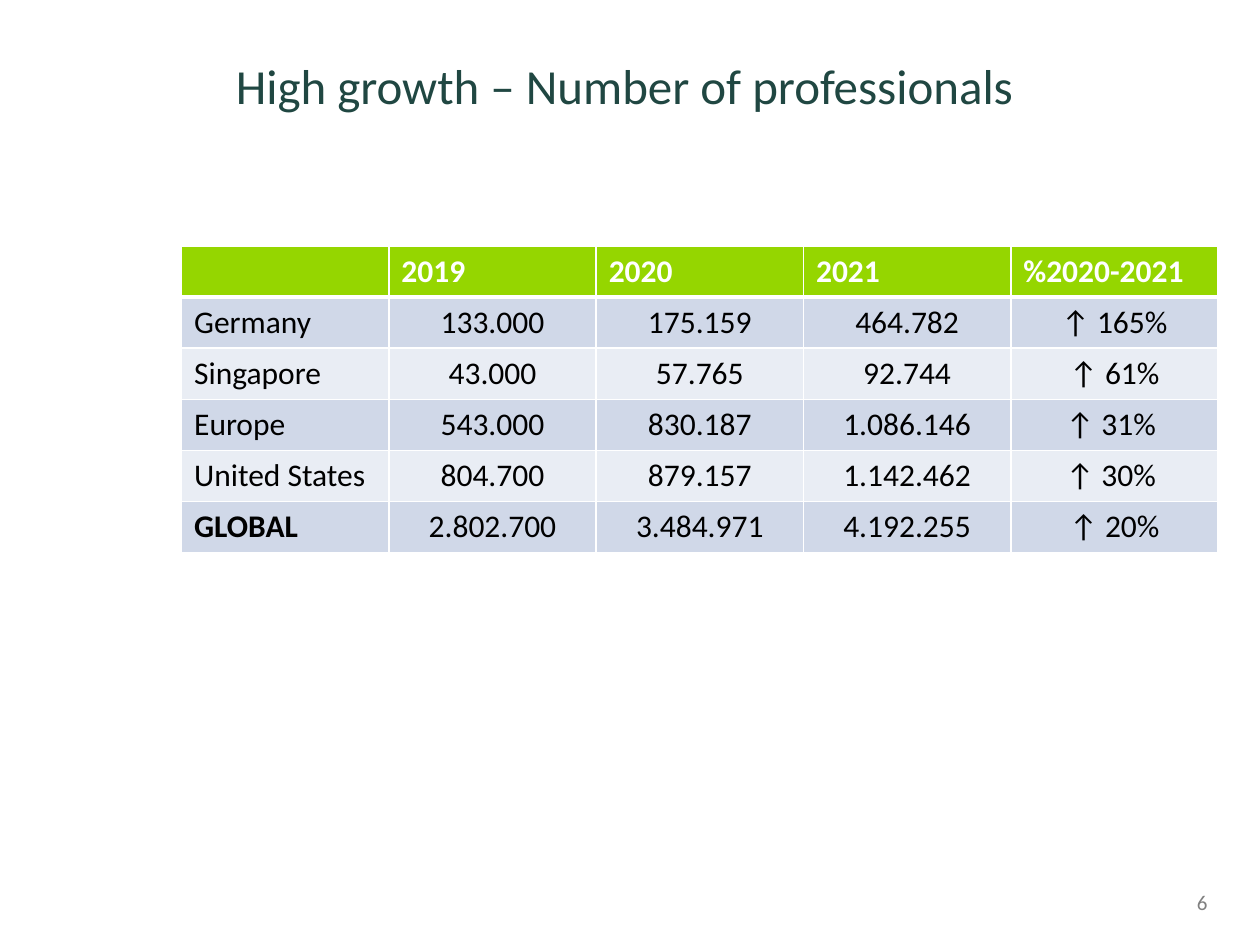
from lxml.etree import SubElement
from pptx import Presentation
from pptx.dml.color import RGBColor
from pptx.enum.text import MSO_ANCHOR as ANCHOR, MSO_AUTO_SIZE as AUTO, PP_ALIGN as ALIGN
from pptx.oxml.ns import qn
from pptx.util import Cm, Pt

HEADER = ["", "2019", "2020", "2021", "%2020-2021"]
ROWS = [
    ["Germany", "133.000", "175.159", "464.782", "↑ 165%"],
    ["Singapore", "43.000", "57.765", "92.744", "↑ 61%"],
    ["Europe", "543.000", "830.187", "1.086.146", "↑ 31% "],
    ["United States", "804.700", "879.157", "1.142.462", "↑ 30% "],
    ["GLOBAL", "2.802.700", "3.484.971", "4.192.255", "↑ 20%"],
]


def rgb(value):
    return RGBColor.from_string(value)


class Deck:
    font = "Calibri"
    green, dark, grey = "95D600", "204742", "808080"
    white, black = "FFFFFF", "000000"
    bands = ("D0D8E8", "E9EDF4")

    def __init__(self, prs):
        self.s = prs.slides.add_slide(prs.slide_layouts[5])

    def set_text(self, tf, text, size, color, bold=False, align=ALIGN.LEFT):
        tf.text = text
        p = tf.paragraphs[0]
        p.alignment = align
        for r in p.runs:
            r.font.name, r.font.size, r.font.bold = self.font, Pt(size), bold
            r.font.color.rgb = rgb(color)
        return p

    def title(self, text, x, y, w, h):
        sp = self.s.shapes.title
        sp.left, sp.top, sp.width, sp.height = Cm(x), Cm(y), Cm(w), Cm(h)
        tf = sp.text_frame
        tf.auto_size, tf.vertical_anchor = AUTO.NONE, ANCHOR.TOP
        p = self.set_text(tf, text, 28, self.dark)
        p.line_spacing = 1.2
        p.space_before = Pt(0)

    def page_number(self, text, x, y, w, h):
        sp = self.s.shapes.add_textbox(Cm(x), Cm(y), Cm(w), Cm(h))
        tf = sp.text_frame
        tf.word_wrap, tf.vertical_anchor = True, ANCHOR.MIDDLE
        self.set_text(tf, text, 12, self.grey, align=ALIGN.RIGHT)

    def borders(self, cell, bottom):
        tc_pr = cell._tc.get_or_add_tcPr()
        for side, width in (("L", 1), ("R", 1), ("T", 1), ("B", bottom)):
            ln = SubElement(tc_pr, qn(f"a:ln{side}"), w=str(Pt(width)))
            fill = SubElement(ln, qn("a:solidFill"))
            SubElement(fill, qn("a:srgbClr"), val=self.white)

    def table(self, rows, x, y, w, h):
        table = self.s.shapes.add_table(len(rows), len(rows[0]),
                                        Cm(x), Cm(y), Cm(w), Cm(h)).table
        for i, row in enumerate(rows):
            head = i == 0
            for j, text in enumerate(row):
                cell = table.cell(i, j)
                self.borders(cell, 3 if head else 1)
                cell.fill.solid()
                cell.fill.fore_color.rgb = rgb(self.green if head else self.bands[(i - 1) % 2])
                self.set_text(cell.text_frame, text, 18,
                              self.white if head else self.black,
                              bold=head or text == "GLOBAL",
                              align=ALIGN.LEFT if head or j == 0 else ALIGN.CENTER)


def main():
    prs = Presentation()
    prs.slide_width, prs.slide_height = Cm(25.4), Cm(19.05)
    deck = Deck(prs)

    # Title
    deck.title("High growth – Number of professionals", 4.5, 0.76, 20.9, 1.6)
    # Professionals by region and year
    deck.table([HEADER] + ROWS, 3.66, 4.96, 20.9, 6.18)
    # Page number
    deck.page_number("6", 18.67, 17.68, 5.92, 1.02)

    prs.save("out.pptx")


if __name__ == "__main__":
    main()
